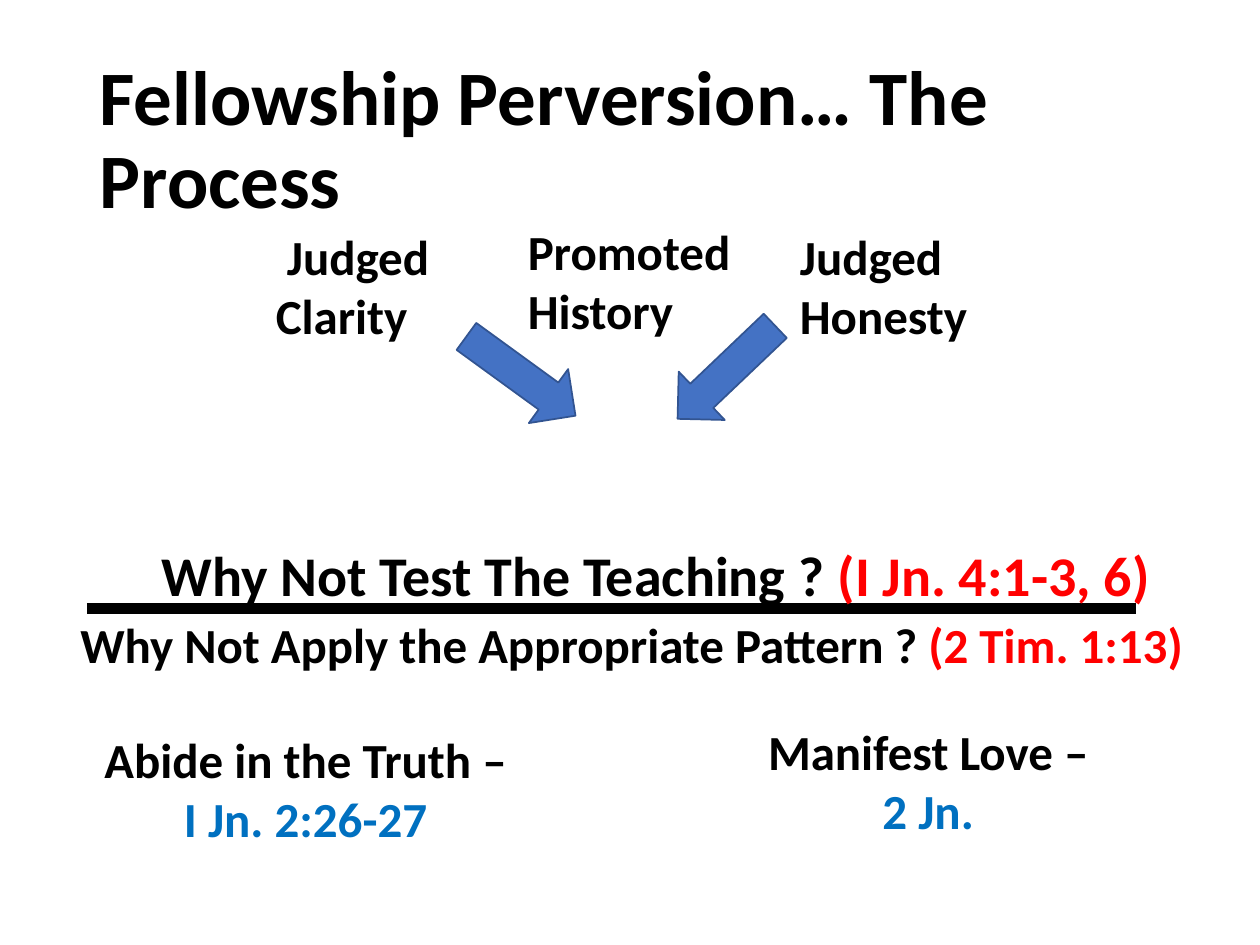
"""Build the Fellowship Perversion process slide."""
from pptx import Presentation
from pptx.dml.color import RGBColor
from pptx.enum.shapes import MSO_CONNECTOR, MSO_SHAPE
from pptx.enum.text import MSO_ANCHOR, MSO_AUTO_SIZE, PP_ALIGN
from pptx.oxml.ns import qn
from pptx.util import Inches, Pt

HUES = {"black": "000000", "red": "FF0000", "sky": "0070C0",
        "blue": "4472C4", "edge": "325491"}


def tint(name):
    return RGBColor.from_string(HUES[name])


def write(frame, lines, size, align):
    frame.word_wrap = True
    for i, line in enumerate(lines):
        para = frame.add_paragraph() if i else frame.paragraphs[0]
        para.alignment = align
        for words, hue in line:
            run = para.add_run()
            run.text = words
            look = {"name": "Calibri", "size": Pt(size), "bold": True}
            for key, value in look.items():
                setattr(run.font, key, value)
            run.font.color.rgb = tint(hue)


deck = Presentation()
deck.slide_width, deck.slide_height = Inches(10), Inches(7.5)
slide = deck.slides.add_slide(deck.slide_layouts[5])
shapes = slide.shapes

title = shapes.title
place = {"left": 0.69, "top": 0.4, "width": 8.62, "height": 1.45}
for key, value in place.items():
    setattr(title, key, Inches(value))
write(title.text_frame, [[("Fellowship Perversion… The Process", "black")]],
      44, PP_ALIGN.LEFT)
title.text_frame.auto_size = MSO_AUTO_SIZE.NONE
title.text_frame.vertical_anchor = MSO_ANCHOR.MIDDLE
title.text_frame.paragraphs[0].line_spacing = 0.9

rule = shapes.add_connector(MSO_CONNECTOR.STRAIGHT, Inches(0.69),
                            Inches(4.83), Inches(9.02), Inches(4.83))
rule.line.color.rgb = tint("black")
rule.line.width = Pt(6)
rule._element.spPr.append(rule._element.makeelement(qn("a:effectLst"), {}))

for left, top, turn in [(3.6, 2.72, 36), (5.23, 2.69, 136.4)]:
    arrow = shapes.add_shape(MSO_SHAPE.RIGHT_ARROW, Inches(left), Inches(top),
                             Inches(1.07), Inches(0.53))
    arrow.rotation = turn
    arrow.shadow.inherit = False
    arrow.fill.solid()
    arrow.fill.fore_color.rgb = tint("blue")
    arrow.line.color.rgb = tint("edge")
    arrow.line.width = Pt(1)

LEFT, MID = PP_ALIGN.LEFT, PP_ALIGN.CENTER
notes = [
    (1.09, 4.24, 8.23, 0.64, 32, MID,
     [[("Why Not Test The Teaching ? ", "black"), ("(I Jn. 4:1-3, 6)", "red")]]),
    (6.25, 1.75, 1.83, 1.04, 28, LEFT, [[("Judged Honesty", "black")]]),
    (2.09, 1.75, 1.58, 1.04, 28, LEFT, [[(" Judged Clarity", "black")]]),
    (4.09, 1.71, 1.98, 1.04, 28, LEFT, [[("Promoted History", "black")]]),
    (0.54, 4.83, 9.33, 0.57, 28, LEFT,
     [[("Why Not Apply the Appropriate Pattern ? ", "black"),
       ("(2 Tim. 1:13)", "red")]]),
    (0.69, 5.74, 3.47, 1.04, 28, MID,
     [[("Abide in the Truth – ", "black"), ("I Jn. 2:26-27", "sky")]]),
    (4.97, 5.68, 4.88, 1.04, 28, MID,
     [[("Manifest Love – ", "black")], [("2 Jn. ", "sky")]]),
]
for left, top, width, height, size, align, lines in notes:
    box = shapes.add_textbox(Inches(left), Inches(top),
                             Inches(width), Inches(height))
    write(box.text_frame, lines, size, align)
    box.text_frame.auto_size = MSO_AUTO_SIZE.SHAPE_TO_FIT_TEXT

deck.save("out.pptx")
